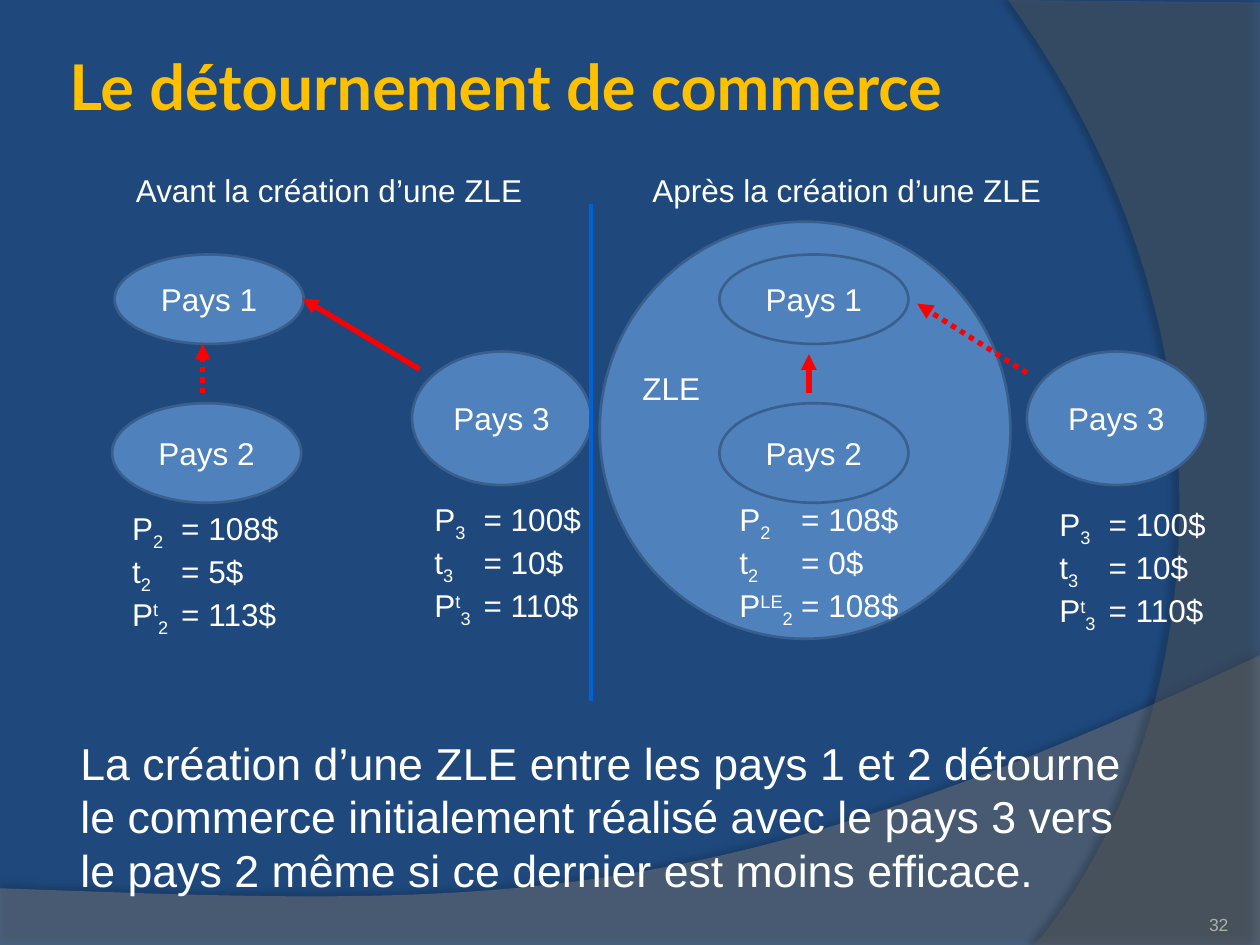
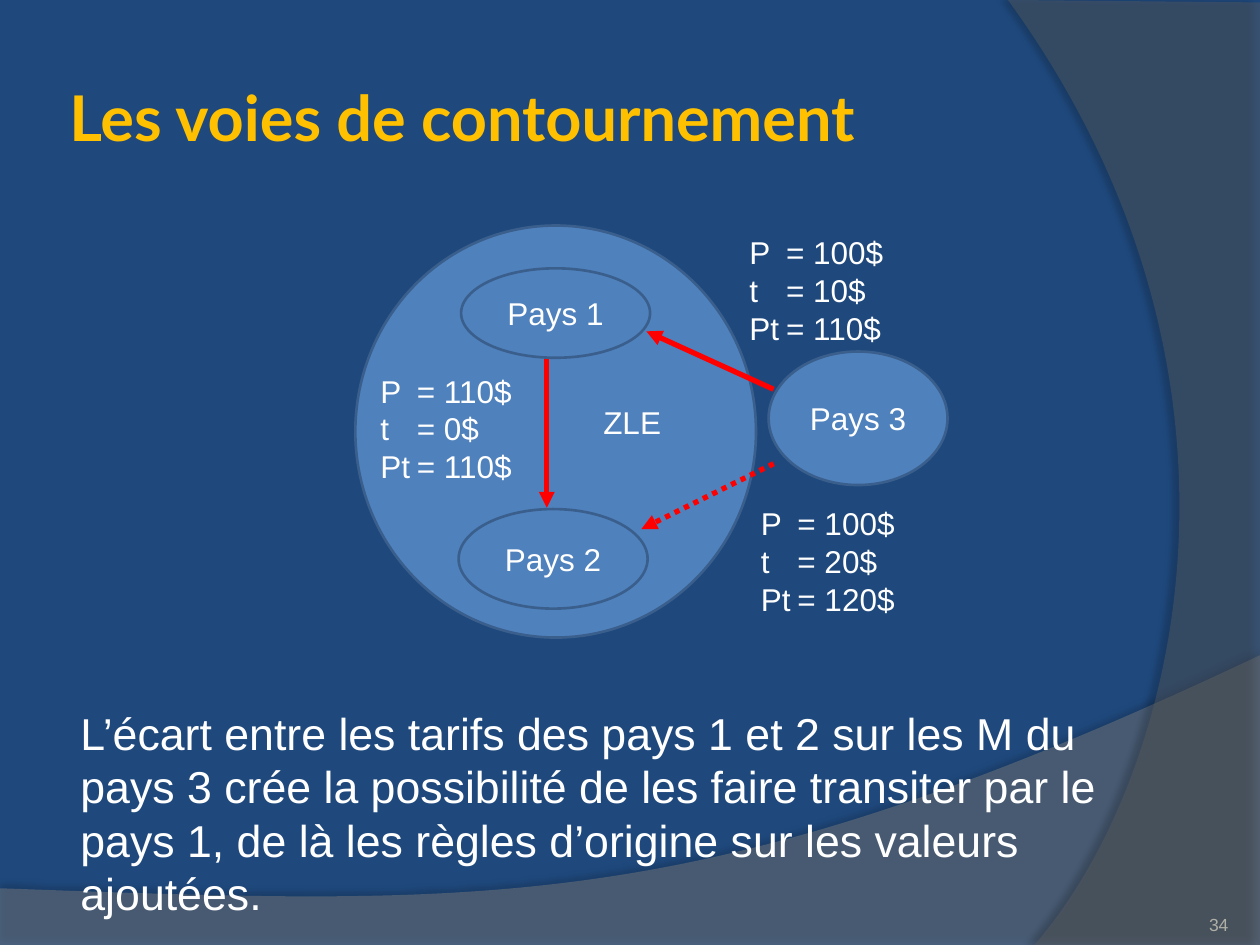
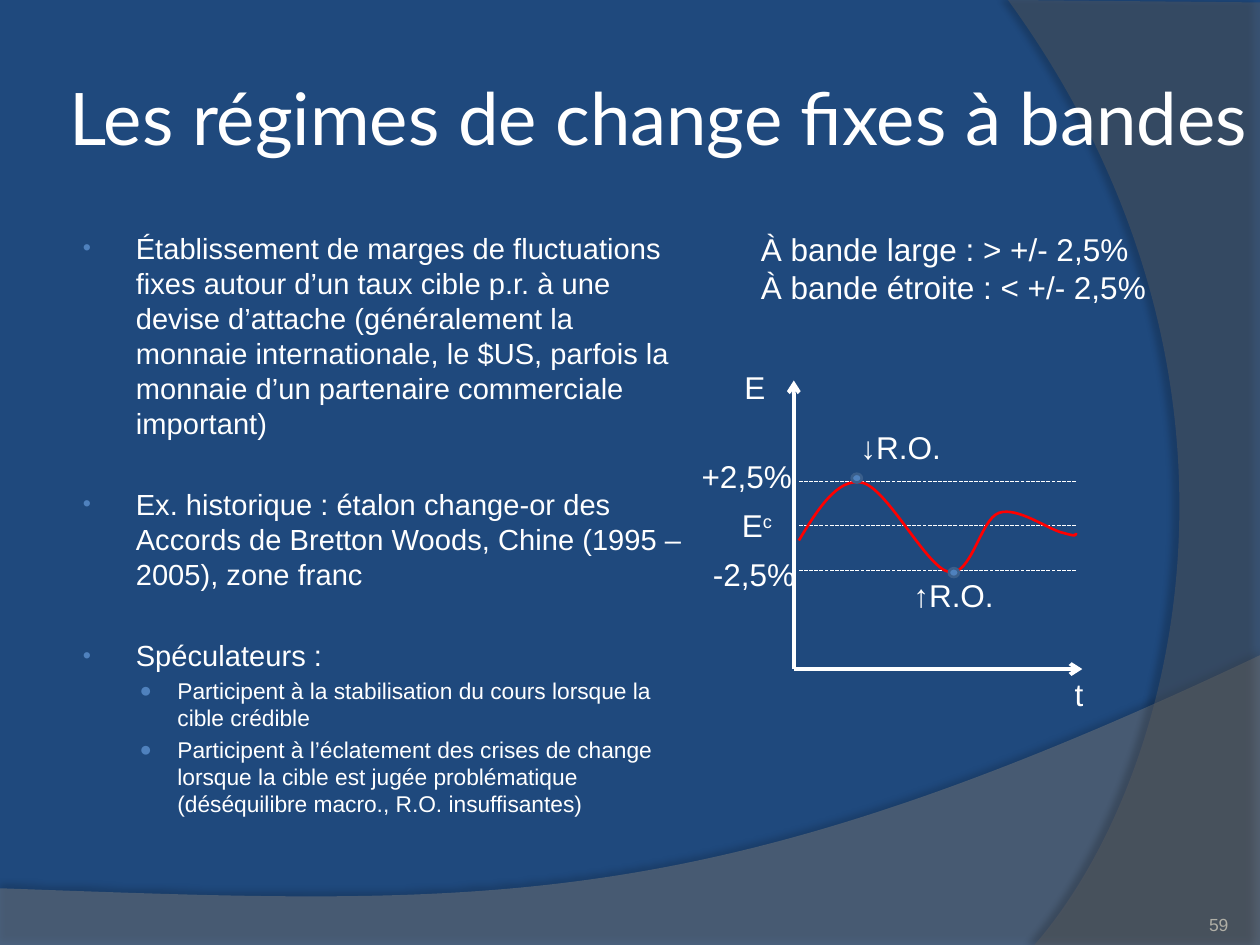
from lxml.etree import SubElement
from pptx import Presentation
from pptx.dml.color import RGBColor
from pptx.enum.dml import MSO_LINE
from pptx.enum.shapes import MSO_CONNECTOR, MSO_SHAPE
from pptx.enum.text import MSO_ANCHOR, MSO_AUTO_SIZE, PP_ALIGN
from pptx.oxml.ns import qn
from pptx.util import Inches, Pt

NAVY = RGBColor(0x1F, 0x49, 0x7D)
BLUE = RGBColor(0x4F, 0x81, 0xBD)
OUTLINE = RGBColor(0x3A, 0x5F, 0x8C)
DIVIDER = RGBColor(0x00, 0x62, 0xD7)
GOLD = RGBColor(0xFF, 0xC0, 0x00)
RED = RGBColor(0xFF, 0x00, 0x00)
WHITE = RGBColor(0xFF, 0xFF, 0xFF)
PAGE_GREY = RGBColor(0xB0, 0xAF, 0xA6)
BAND_GREY = RGBColor(0x7F, 0x7F, 0x7F)
SIDE_GREY = RGBColor(0x5E, 0x5E, 0x5E)
TITLE_FONT = "Lato"
BODY_FONT = "Arial"
COUNTRY_SIZES = {"Pays 1": (1.5, 0.71), "Pays 2": (1.5, 0.79), "Pays 3": (1.42, 1.06)}


def add_child(parent, tag, **attributes):
    child = SubElement(parent, qn(tag))
    for name, value in attributes.items():
        child.set(name, str(value))
    return child


def write_paragraph(paragraph, content, size=18, color=WHITE, font=BODY_FONT, bold=False,
                    align=PP_ALIGN.LEFT, before=0, indent=None, bullet=None, tab=None):
    """Content is a string, or a list of strings and (text, baseline percent) pairs."""
    paragraph.alignment = align
    paragraph.space_before = Pt(before)
    properties = paragraph._p.get_or_add_pPr()
    if indent:
        properties.set("marL", str(Inches(indent[0])))
        properties.set("indent", str(Inches(indent[1])))
    if bullet:
        character, percent = bullet
        add_child(add_child(properties, "a:buClr"), "a:srgbClr", val=BLUE)
        add_child(properties, "a:buSzPct", val=percent * 1000)
        add_child(properties, "a:buFont", typeface=BODY_FONT)
        add_child(properties, "a:buChar", char=character)
    if tab:
        add_child(add_child(properties, "a:tabLst"), "a:tab", pos=Inches(tab), algn="l")
    for piece in [content] if isinstance(content, str) else content:
        text, baseline = (piece, 0) if isinstance(piece, str) else piece
        run = paragraph.add_run()
        run.text = text
        run.font.size = Pt(size)
        run.font.name = font
        run.font.bold = bold
        run.font.color.rgb = color
        if baseline:
            run.font._element.set("baseline", str(baseline * 1000))


def add_text(slide, box, paragraphs, wrap=False, anchor=MSO_ANCHOR.TOP, inset=None, **text_format):
    """Each paragraph is its content, or a (content, own format) pair."""
    text_box = slide.shapes.add_textbox(*map(Inches, box))
    frame = text_box.text_frame
    frame.word_wrap = wrap
    frame.auto_size = MSO_AUTO_SIZE.NONE if wrap else MSO_AUTO_SIZE.SHAPE_TO_FIT_TEXT
    frame.vertical_anchor = anchor
    if inset is not None:
        frame.margin_left = frame.margin_right = Inches(inset)
        frame.margin_top = frame.margin_bottom = Inches(inset)
    for index, item in enumerate(paragraphs):
        content, own_format = item if isinstance(item, tuple) else (item, {})
        paragraph = frame.add_paragraph() if index else frame.paragraphs[0]
        write_paragraph(paragraph, content, **{**text_format, **own_format})


def add_line(slide, start, end, color=RED, width=3, dash=None, head="triangle"):
    line = slide.shapes.add_connector(MSO_CONNECTOR.STRAIGHT, *map(Inches, (*start, *end)))
    line.line.color.rgb = color
    line.line.width = Pt(width)
    if dash:
        line.line.dash_style = dash
    if head:
        add_child(line.line._get_or_add_ln(), "a:tailEnd", type=head)
    add_child(line._element.spPr, "a:effectLst")


def add_ellipse(slide, left, top, width, height, label=None):
    ellipse = slide.shapes.add_shape(MSO_SHAPE.OVAL, *map(Inches, (left, top, width, height)))
    ellipse.shadow.inherit = False
    ellipse.fill.solid()
    ellipse.fill.fore_color.rgb = BLUE
    ellipse.line.color.rgb = OUTLINE
    ellipse.line.width = Pt(1.5)
    if label:
        ellipse.text_frame.vertical_anchor = MSO_ANCHOR.MIDDLE
        write_paragraph(ellipse.text_frame.paragraphs[0], label, align=PP_ALIGN.CENTER)


def add_country(slide, name, left, top):
    add_ellipse(slide, left, top, *COUNTRY_SIZES[name], label=name)


def add_outline(slide, left, top, start, segments, close):
    """Each segment lists its end point, after two control points if it is a curve."""
    def place(point):
        return Inches(left + point[0]), Inches(top + point[1])

    builder = slide.shapes.build_freeform(*place(start))
    builder.add_line_segments([place(segment[-1]) for segment in segments], close=close)
    outline = builder.convert_to_shape()
    outline.shadow.inherit = False
    drawn_segments = list(outline._element.iter(qn("a:lnTo")))
    for drawn, segment in zip(drawn_segments, segments):
        if len(segment) == 1:
            continue
        for index, control in enumerate(segment[:-1]):
            x, y = place(control)
            point = add_child(drawn, "a:pt", x=x - outline.left, y=y - outline.top)
            drawn.insert(index, point)
        drawn.tag = qn("a:cubicBezTo")
    return outline


def add_band(slide, start, segments, color, opacity, shadow_opacity, distance, direction):
    band = add_outline(slide, 0, 0, start, segments, close=True)
    band.fill.solid()
    band.fill.fore_color.rgb = color
    band.line.fill.background()
    properties = band._element.spPr
    add_child(properties.find(".//" + qn("a:srgbClr")), "a:alpha", val=opacity * 1000)
    shadow = add_child(properties.find(qn("a:effectLst")), "a:outerShdw", blurRad=Pt(4),
                       dist=Pt(distance), dir=direction * 60000, algn="ctr", rotWithShape=0)
    shadow_color = add_child(shadow, "a:srgbClr", val="000000")
    add_child(shadow_color, "a:alpha", val=shadow_opacity * 1000)
    return band


def dress_master(presentation, slide):
    """Give the master its background and the two curved bands, built on the slide first."""
    master = presentation.slide_master
    master.background.fill.solid()
    master.background.fill.fore_color.rgb = NAVY
    bottom = [[(0, 7.51)], [(10, 7.51)], [(10, 5.2)], [(5.59, 7.29), (3.91, 7.19), (0, 7.05)]]
    side = [[(10, 7.5)], [(8.21, 7.5)], [(9.35, 6.19), (10.18, 3), (8, 0)]]
    bands = (add_band(slide, (0, 7.05), bottom, BAND_GREY, 45, 35, 3.5, 270),
             add_band(slide, (10, 0.02), side, SIDE_GREY, 40, 45, 4, 180))
    for index, band in enumerate(bands):
        band._element.nvSpPr.cNvPr.set("id", str(101 + index))
        master.shapes.element.insert(2 + index, band._element)


def add_slide(presentation, title, number, top=0.3, size=36, color=GOLD, bold=True):
    slide = presentation.slides.add_slide(presentation.slide_layouts[5])
    placeholder = slide.shapes.title
    placeholder.left, placeholder.top = Inches(0.5), Inches(top)
    placeholder.width, placeholder.height = Inches(9.5), Inches(1.25)
    frame = placeholder.text_frame
    frame.auto_size = MSO_AUTO_SIZE.NONE
    frame.vertical_anchor = MSO_ANCHOR.MIDDLE
    frame.margin_left = frame.margin_right = Inches(0.05)
    frame.margin_top = frame.margin_bottom = Inches(0.05)
    write_paragraph(frame.paragraphs[0], title, size=size, color=color, font=TITLE_FONT, bold=bold)
    add_text(slide, (8.92, 7.02, 0.83, 0.4), [str(number)], wrap=True, inset=0,
             anchor=MSO_ANCHOR.BOTTOM, size=10, color=PAGE_GREY, align=PP_ALIGN.RIGHT)
    return slide


def add_conclusion(slide, top, text):
    add_text(slide, (0.5, top, 8.67, 1.58), [text], wrap=True, size=25.5, before=5.1,
             indent=(0.04, 0))


def add_prices(slide, left, top, price, tariff, total, country=None, regime="t", tab=0.29):
    """Price, tariff and price with tariff; a country number is set as a subscript."""
    if country:
        subscript = (country, -25)
        names = (["P", subscript], ["t", subscript], ["P", (regime, 30), subscript])
    else:
        names = (["P"], ["t"], ["Pt"])
    rows = [[*name, f"\t= {amount}$"] for name, amount in zip(names, (price, tariff, total))]
    add_text(slide, (left, top, tab + 0.98, 1.01), rows, tab=tab)


def add_before_union(slide, left, top):
    add_text(slide, (left + 0.08, top, 3.3, 0.4), ["Avant la création d’une ZLE"])
    add_country(slide, "Pays 1", left + 0.01, top + 0.71)
    add_country(slide, "Pays 2", left - 0.01, top + 1.89)
    add_country(slide, "Pays 3", left + 2.37, top + 1.48)
    add_line(slide, (left + 2.43, top + 1.62), (left + 1.5, top + 1.06))
    add_line(slide, (left + 0.71, top + 1.81), (left + 0.71, top + 1.42), dash=MSO_LINE.ROUND_DOT)
    add_prices(slide, left + 0.05, top + 2.68, 108, 5, 113, country="2", tab=0.39)
    add_prices(slide, left + 2.45, top + 2.61, 100, 10, 110, country="3", tab=0.39)


def add_after_union(slide, left, top):
    add_ellipse(slide, left, top + 0.45, 3.26, 3.31)
    add_text(slide, (left + 0.32, top, 3.32, 0.4), ["Après la création d’une ZLE"])
    add_country(slide, "Pays 1", left + 0.95, top + 0.71)
    add_country(slide, "Pays 2", left + 0.95, top + 1.89)
    add_country(slide, "Pays 3", left + 3.39, top + 1.48)
    add_text(slide, (left + 0.24, top + 1.57, 0.66, 0.4), ["ZLE"])
    add_line(slide, (left + 1.66, top + 1.81), (left + 1.66, top + 1.5))
    add_line(slide, (left + 3.39, top + 1.65), (left + 2.52, top + 1.1), dash=MSO_LINE.ROUND_DOT)
    add_prices(slide, left + 1.01, top + 2.61, 108, 0, 108, country="2", regime="LE", tab=0.49)
    add_prices(slide, left + 3.55, top + 2.65, 100, 10, 110, country="3", tab=0.39)


def add_bypass_diagram(slide, left, top):
    add_ellipse(slide, left, top, 3.18, 3.27)
    add_country(slide, "Pays 1", left + 0.84, top + 0.34)
    add_country(slide, "Pays 2", left + 0.82, top + 2.25)
    add_country(slide, "Pays 3", left + 3.28, top + 1)
    add_text(slide, (left + 1.87, top + 1.36, 0.66, 0.4), ["ZLE"])
    add_line(slide, (left + 1.52, top + 1.06), (left + 1.52, top + 2.24))
    add_line(slide, (left + 3.32, top + 1.3), (left + 2.31, top + 0.84))
    add_line(slide, (left + 3.32, top + 1.89), (left + 2.27, top + 2.41), dash=MSO_LINE.ROUND_DOT)
    add_prices(slide, left + 3.03, top + 0.01, 100, 10, 110)
    add_prices(slide, left + 0.1, top + 1.11, 110, 0, 110)
    add_prices(slide, left + 3.12, top + 2.16, 100, 20, 120)


def add_regime_points(slide, box):
    main_point = {"size": 16.65, "indent": (0.46, -0.42), "bullet": ("•", 80)}
    detail = {"size": 12.95, "indent": (0.79, -0.3), "bullet": ("●", 90), "before": 2.6}
    add_text(slide, box, [
        ("Établissement de marges de fluctuations fixes autour d’un taux cible p.r. à une devise "
         "d’attache (généralement la monnaie internationale, le $US, parfois la monnaie d’un "
         "partenaire commerciale important)", {**main_point, "before": 3.3}),
        ("Ex. historique : étalon change-or des Accords de Bretton Woods, Chine (1995 – 2005), "
         "zone franc", {**main_point, "before": 26.5}),
        ("Spéculateurs :", {**main_point, "before": 26.5}),
        ("Participent à la stabilisation du cours lorsque la cible crédible", detail),
        ("Participent à l’éclatement des crises de change lorsque la cible est jugée "
         "problématique (déséquilibre macro., R.O. insuffisantes)", detail),
    ], wrap=True)


def add_exchange_band(slide, left, top):
    """Exchange rate moving between its two margins, from the top left of the axes."""
    origin = (left, top + 2.29)
    for end in ((left + 2.29, origin[1]), (left, top)):
        add_line(slide, origin, end, color=WHITE, width=2.25, head="arrow")
    for offset in (0.8, 1.15, 1.51):
        add_line(slide, (left + 2.24, top + offset), (left + 0.04, top + offset), color=WHITE,
                 width=0.75, dash=MSO_LINE.SQUARE_DOT, head=None)
    labels = [("t", 2.13, 2.29, 0.27), ("E", -0.49, -0.15, 0.37),
              (["E", ("c", 30)], -0.51, 0.95, 0.45), ("+2,5%", -0.83, 0.56, 0.92),
              ("-2,5%", -0.74, 1.34, 0.86), ("↓R.O.", 0.43, 0.33, 0.85),
              ("↑R.O.", 0.85, 1.5, 0.85)]
    for label, across, down, width in labels:
        add_text(slide, (left + across, top + down, width, 0.4), [label])

    waves = [[(0.19, 1.02), (0.35, 0.77), (0.54, 0.81)],
             [(0.74, 0.85), (1.05, 1.48), (1.23, 1.52)],
             [(1.41, 1.56), (1.48, 1.1), (1.63, 1.05)],
             [(1.78, 1), (2.03, 1.19), (2.14, 1.21)],
             [(2.24, 1.24), (2.24, 1.23), (2.24, 1.21)]]
    rate = add_outline(slide, left, top, (0.04, 1.27), waves, close=False)
    rate.fill.background()
    rate.line.color.rgb = RED
    rate.line.width = Pt(1.5)
    for across, down in ((0.46, 0.74), (1.23, 1.49)):
        add_ellipse(slide, left + across, top + down, 0.08, 0.07)


def main():
    presentation = Presentation()
    presentation.slide_width, presentation.slide_height = Inches(10), Inches(7.5)

    diversion = add_slide(presentation, "Le détournement de commerce", 32, top=0.05)
    dress_master(presentation, diversion)
    add_before_union(diversion, 0.9, 1.31)
    add_after_union(diversion, 4.76, 1.31)
    add_line(diversion, (4.69, 1.62), (4.69, 5.56), color=DIVIDER, width=2.25, head=None)
    add_conclusion(diversion, 5.79, "La création d’une ZLE entre les pays 1 et 2 détourne le "
                   "commerce initialement réalisé avec le pays 3 vers le pays 2 même si ce "
                   "dernier est moins efficace.")

    bypass = add_slide(presentation, "Les voies de contournement", 34)
    add_bypass_diagram(bypass, 2.82, 1.79)
    add_conclusion(bypass, 5.55, "L’écart entre les tarifs des pays 1 et 2 sur les M du pays 3 "
                   "crée la possibilité de les faire transiter par le pays 1, de là les règles "
                   "d’origine sur les valeurs ajoutées.")

    regimes = add_slide(presentation, "Les régimes de change fixes à bandes", 59,
                        size=41.4, color=WHITE, bold=False)
    add_regime_points(regimes, (0.52, 1.78, 5.04, 5.12))
    add_text(regimes, (5.94, 1.78, 3.28, 0.71),
             ["À bande large : > +/- 2,5%", "À bande étroite : < +/- 2,5%"])
    add_exchange_band(regimes, 6.3, 3.02)

    presentation.save("out.pptx")


if __name__ == "__main__":
    main()
